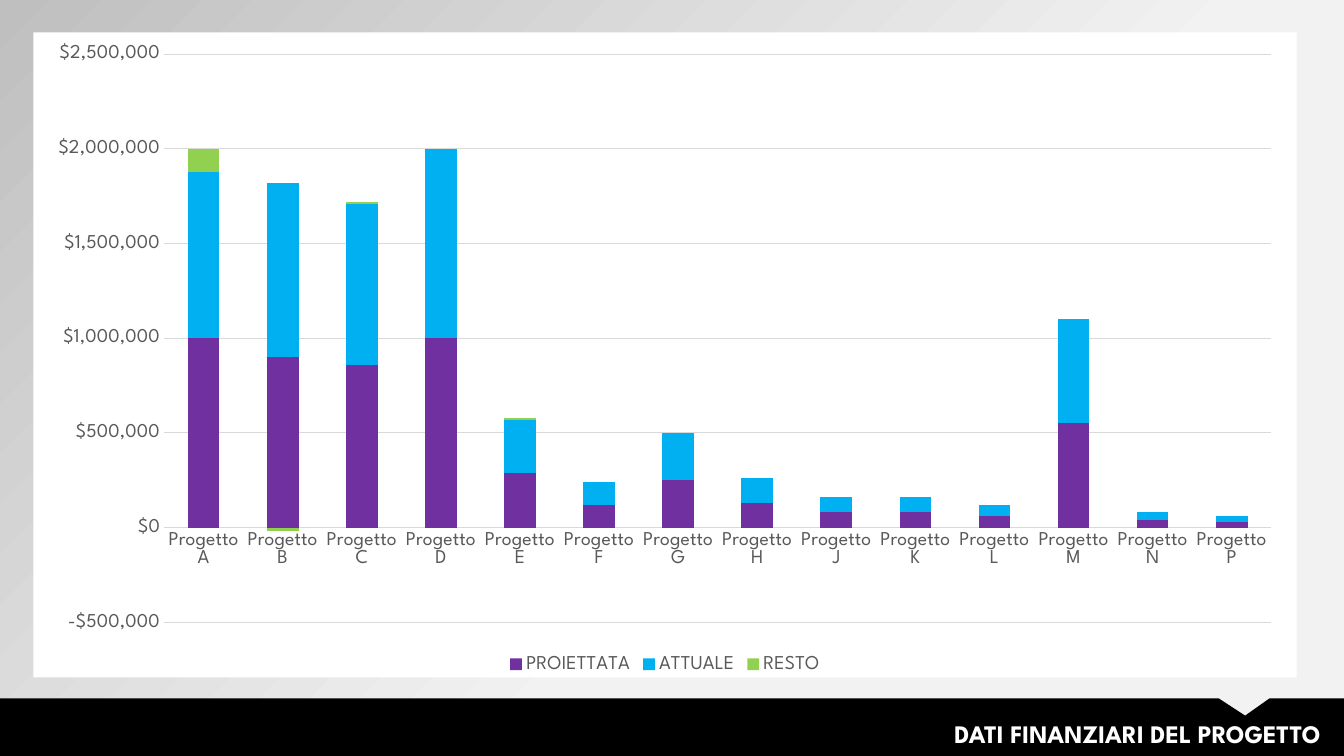
from lxml import etree
from pptx import Presentation
from pptx.chart.data import CategoryChartData
from pptx.dml.color import RGBColor
from pptx.enum.chart import XL_CHART_TYPE as ChartType
from pptx.enum.chart import XL_LEGEND_POSITION as LegendPosition
from pptx.enum.chart import XL_TICK_MARK as TickMark
from pptx.enum.text import MSO_ANCHOR as Anchor
from pptx.enum.text import PP_ALIGN as Align
from pptx.oxml import parse_xml
from pptx.oxml.ns import nsdecls
from pptx.util import Inches, Pt

FONT = "League Spartan"
BLACK = RGBColor(0x00, 0x00, 0x00)
WHITE = RGBColor(0xFF, 0xFF, 0xFF)
LIGHT_GRAY = RGBColor(0xF2, 0xF2, 0xF2)
MID_GRAY = RGBColor(0xBF, 0xBF, 0xBF)
GRID_GRAY = RGBColor(0xD9, 0xD9, 0xD9)
TEXT_GRAY = RGBColor(0x59, 0x59, 0x59)
PURPLE = RGBColor(0x70, 0x30, 0xA0)
BLUE = RGBColor(0x00, 0xB0, 0xF0)
GREEN = RGBColor(0x92, 0xD0, 0x50)

PROJECTS = [f"Progetto {letter}" for letter in "ABCDEFGHJKLMNP"]
SMALL_PROJECTS = [120000, 250000, 130000, 80000, 80000, 60000, 550000, 40000, 30000]
SERIES = [
    ("PROIETTATA", PURPLE, [1000000, 900000, 860000, 1000000, 290000] + SMALL_PROJECTS),
    ("ATTUALE", BLUE, [880000, 920000, 850000, 1000000, 280000] + SMALL_PROJECTS),
    ("RESTO", GREEN, [120000, -20000, 10000, 0, 10000] + [0] * len(SMALL_PROJECTS)),
]


def format_font(font, size, color, bold=False):
    font.name = FONT
    font.size = Pt(size)
    font.color.rgb = color
    font.bold = bold


def format_line(line):
    line.color.rgb = GRID_GRAY
    line.width = Pt(0.75)


def paint_background(slide):
    fill = slide.background.fill
    fill.gradient()
    fill.gradient_angle = 135
    for stop, color, position in zip(
        fill.gradient_stops, (LIGHT_GRAY, MID_GRAY), (0.4, 1)
    ):
        stop.color.rgb = color
        stop.position = position


def add_title_band(slide, left, top, width, height):
    right, bottom = left + width, top + height
    notch = right - Inches(0.98)
    builder = slide.shapes.build_freeform(left, top)
    builder.add_line_segments(
        [
            (notch - Inches(0.26), top),
            (notch, top + Inches(0.17)),
            (notch + Inches(0.24), top),
            (right, top),
            (right, bottom),
            (left, bottom),
        ]
    )
    band = builder.convert_to_shape()
    band.shadow.inherit = False
    band.fill.solid()
    band.fill.fore_color.rgb = BLACK
    band.line.fill.background()

    title = slide.shapes.title
    title.element.addprevious(band.element)
    title.left, title.top = left + Inches(4.14), top + Inches(0.15)
    title.width, title.height = Inches(9.06), Inches(0.4)
    frame = title.text_frame
    frame.text = "DATI FINANZIARI DEL PROGETTO"
    frame.word_wrap = True
    frame.vertical_anchor = Anchor.MIDDLE
    paragraph = frame.paragraphs[0]
    paragraph.alignment = Align.RIGHT
    format_font(paragraph.font, 18, WHITE, bold=True)


def add_finance_chart(slide, left, top, width, height):
    data = CategoryChartData(number_format='"$"#,##0')
    data.categories = PROJECTS
    for name, _, values in SERIES:
        data.add_series(name, values)
    chart = slide.shapes.add_chart(
        ChartType.COLUMN_STACKED, left, top, width, height, data
    ).chart
    format_font(chart.font, 14, BLACK)
    chart.has_title = False

    plot = chart.plots[0]
    plot.gap_width = 150
    plot.overlap = 100
    plot.vary_by_categories = False
    for series, (_, color, _) in zip(plot.series, SERIES):
        series.format.fill.solid()
        series.format.fill.fore_color.rgb = color
        series.invert_if_negative = False

    for axis in (chart.category_axis, chart.value_axis):
        axis.major_tick_mark = axis.minor_tick_mark = TickMark.NONE
        format_font(axis.tick_labels.font, 14, TEXT_GRAY)
    format_line(chart.category_axis.format.line)
    value_axis = chart.value_axis
    value_axis.minimum_scale = -500000
    value_axis.maximum_scale = 2500000
    value_axis.major_unit = 500000
    value_axis.format.line.fill.background()
    format_line(value_axis.major_gridlines.format.line)
    value_axis.tick_labels.number_format = '"$"#,##0'
    value_axis.tick_labels.number_format_is_linked = False

    chart.has_legend = True
    chart.legend.position = LegendPosition.BOTTOM
    chart.legend.include_in_layout = False
    format_font(chart.legend.font, 14, TEXT_GRAY)

    chart_area = parse_xml(f"<c:spPr {nsdecls('c', 'a')}/>")
    fill = etree.SubElement(chart_area, f"{{{chart_area.nsmap['a']}}}solidFill")
    etree.SubElement(fill, f"{{{chart_area.nsmap['a']}}}srgbClr", val=str(WHITE))
    line = etree.SubElement(chart_area, f"{{{chart_area.nsmap['a']}}}ln")
    etree.SubElement(line, f"{{{chart_area.nsmap['a']}}}noFill")
    chart.element.chart.addnext(chart_area)


def main():
    presentation = Presentation()
    presentation.slide_width = Inches(13.33)
    presentation.slide_height = Inches(7.5)
    slide = presentation.slides.add_slide(presentation.slide_layouts[5])
    paint_background(slide)
    add_title_band(slide, Inches(0), Inches(6.93), Inches(13.33), Inches(0.57))
    add_finance_chart(slide, Inches(0.33), Inches(0.32), Inches(12.53), Inches(6.4))
    presentation.save("out.pptx")


if __name__ == "__main__":
    main()
